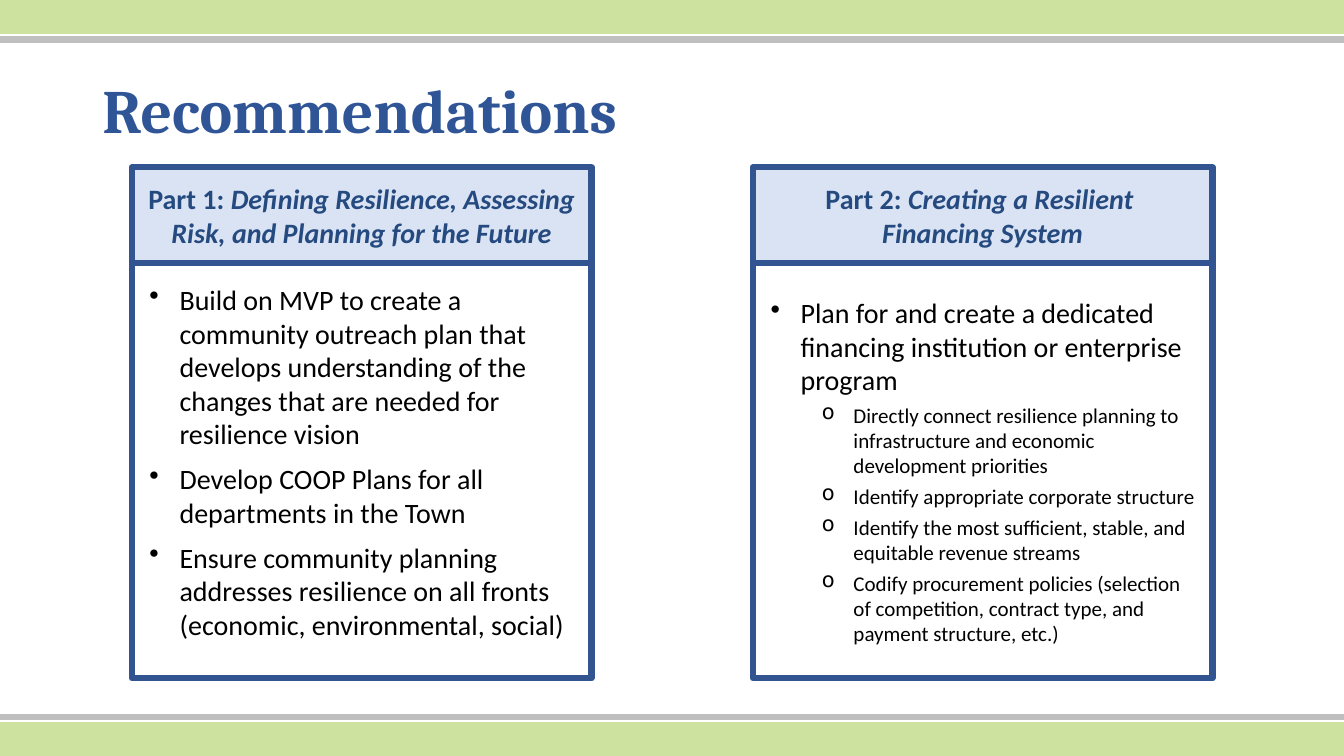
from dataclasses import dataclass

from lxml import etree
from pptx import Presentation
from pptx import util as u
from pptx.dml.color import RGBColor
from pptx.enum import shapes, text
from pptx.oxml.ns import qn

COLORS = {
    "green": "CEE2A0", "gray": "BFBFBF", "white": "FFFFFF", "black": "000000",
    "border": "325491", "header": "DAE3F3", "heading": "254A80", "title": "2F5597",
}
WIDTH, HEIGHT = 960, 540
PANEL_WIDTH, HEADER_TOP, HEADER_HEIGHT, BODY_HEIGHT = 328.3, 119.5, 68.4, 296.6


@dataclass(frozen=True)
class Bar:
    top: float
    height: float
    color: str


@dataclass(frozen=True)
class Bullet:
    words: str
    sub: bool = False


@dataclass(frozen=True)
class Panel:
    left: float
    label: str
    title_lines: tuple[str, ...]
    bullets: tuple[Bullet, ...]
    space_after: float = 0
    top_inset: float = 3.6
    bottom_inset: float = 3.6


BARS = (
    Bar(0, 24, "green"), Bar(516, 24, "green"),
    Bar(510.4, 3.6, "gray"), Bar(26.4, 3.6, "gray"),
)
PANELS = (
    Panel(
        94.2, "Part 1: ",
        ("Defining Resilience, Assessing Risk, and Planning for the Future",),
        (
            Bullet("Build on MVP to create a community outreach plan that develops "
                   "understanding of the changes that are needed for resilience vision"),
            Bullet("Develop COOP Plans for all departments in the Town"),
            Bullet("Ensure community planning addresses resilience on all fronts "
                   "(economic, environmental, social)"),
        ),
        space_after=4, top_inset=8.8, bottom_inset=21.6,
    ),
    Panel(
        537.8, "Part 2: ", ("Creating a Resilient ", "Financing System"),
        (
            Bullet("Plan for and create a dedicated financing institution "
                   "or enterprise program"),
            Bullet("Directly connect resilience planning to infrastructure and "
                   "economic development priorities", sub=True),
            Bullet("Identify appropriate corporate structure", sub=True),
            Bullet("Identify the most sufficient, stable, and equitable "
                   "revenue streams", sub=True),
            Bullet("Codify procurement policies (selection of competition, "
                   "contract type, and payment structure, etc.)", sub=True),
        ),
    ),
)


def add_box(slide, left: float, top: float, width: float, height: float,
            fill: str, line: str, weight: float):
    shape = slide.shapes.add_shape(
        shapes.MSO_SHAPE.RECTANGLE,
        u.Pt(left), u.Pt(top), u.Pt(width), u.Pt(height))
    shape.shadow.inherit = False
    shape.fill.solid()
    shape.fill.fore_color.rgb = RGBColor.from_string(COLORS[fill])
    shape.line.color.rgb = RGBColor.from_string(COLORS[line])
    shape.line.width = u.Pt(weight)
    shape.text_frame.word_wrap = True
    shape.text_frame.vertical_anchor = text.MSO_ANCHOR.MIDDLE
    return shape


def format_run(run, size: float, color: str, name: str = "Calibri",
               bold: bool = False, italic: bool = False) -> None:
    run.font.name = name
    run.font.size = u.Pt(size)
    run.font.bold = bold
    run.font.italic = italic
    run.font.color.rgb = RGBColor.from_string(COLORS[color])


def set_bullet(paragraph, character: str, margin: float, indent: float) -> None:
    properties = paragraph._p.get_or_add_pPr()
    properties.set("marL", str(u.Pt(margin)))
    properties.set("indent", str(u.Pt(indent)))
    etree.SubElement(properties, qn("a:buChar")).set("char", character)


def add_title(slide) -> None:
    shape = slide.shapes.add_textbox(u.Pt(66), u.Pt(28.8), u.Pt(828), u.Pt(104.4))
    frame = shape.text_frame
    frame.word_wrap = True
    frame.vertical_anchor = text.MSO_ANCHOR.MIDDLE
    frame.text = "Recommendations"
    paragraph = frame.paragraphs[0]
    paragraph.line_spacing = 0.9
    format_run(paragraph.runs[0], 44, "title", "Cambria", bold=True)


def add_body(slide, panel: Panel) -> None:
    shape = add_box(slide, panel.left, HEADER_TOP + HEADER_HEIGHT,
                    PANEL_WIDTH, BODY_HEIGHT, "white", "border", 4.5)
    frame = shape.text_frame
    frame.margin_top = u.Pt(panel.top_inset)
    frame.margin_bottom = u.Pt(panel.bottom_inset)
    frame.text = "\n".join(bullet.words for bullet in panel.bullets)
    for paragraph, bullet in zip(frame.paragraphs, panel.bullets):
        paragraph.alignment = text.PP_ALIGN.LEFT
        paragraph.level = 1 if bullet.sub else 0
        paragraph.space_before = u.Pt(4)
        paragraph.space_after = u.Pt(panel.space_after)
        if bullet.sub:
            set_bullet(paragraph, "o", 64.8, -22.5)
        else:
            set_bullet(paragraph, "•", 27, -21.5)
        format_run(paragraph.runs[0], 15 if bullet.sub else 20, "black")


def add_header(slide, panel: Panel) -> None:
    shape = add_box(slide, panel.left, HEADER_TOP, PANEL_WIDTH, HEADER_HEIGHT,
                    "header", "border", 4.5)
    shape.text_frame.text = panel.label
    paragraph = shape.text_frame.paragraphs[0]
    paragraph.alignment = text.PP_ALIGN.CENTER
    format_run(paragraph.runs[0], 20, "heading", bold=True)
    for index, line in enumerate(panel.title_lines):
        if index:
            paragraph.add_line_break()
        run = paragraph.add_run()
        run.text = line
        format_run(run, 20, "heading", bold=True, italic=True)


def main() -> None:
    presentation = Presentation()
    presentation.slide_width = u.Pt(WIDTH)
    presentation.slide_height = u.Pt(HEIGHT)
    slide = presentation.slides.add_slide(presentation.slide_layouts[6])
    add_title(slide)
    for bar in BARS:
        add_box(slide, 0, bar.top, WIDTH, bar.height, bar.color, bar.color, 1)
    for panel in PANELS:
        add_body(slide, panel)
        add_header(slide, panel)
    presentation.save("out.pptx")


if __name__ == "__main__":
    main()
